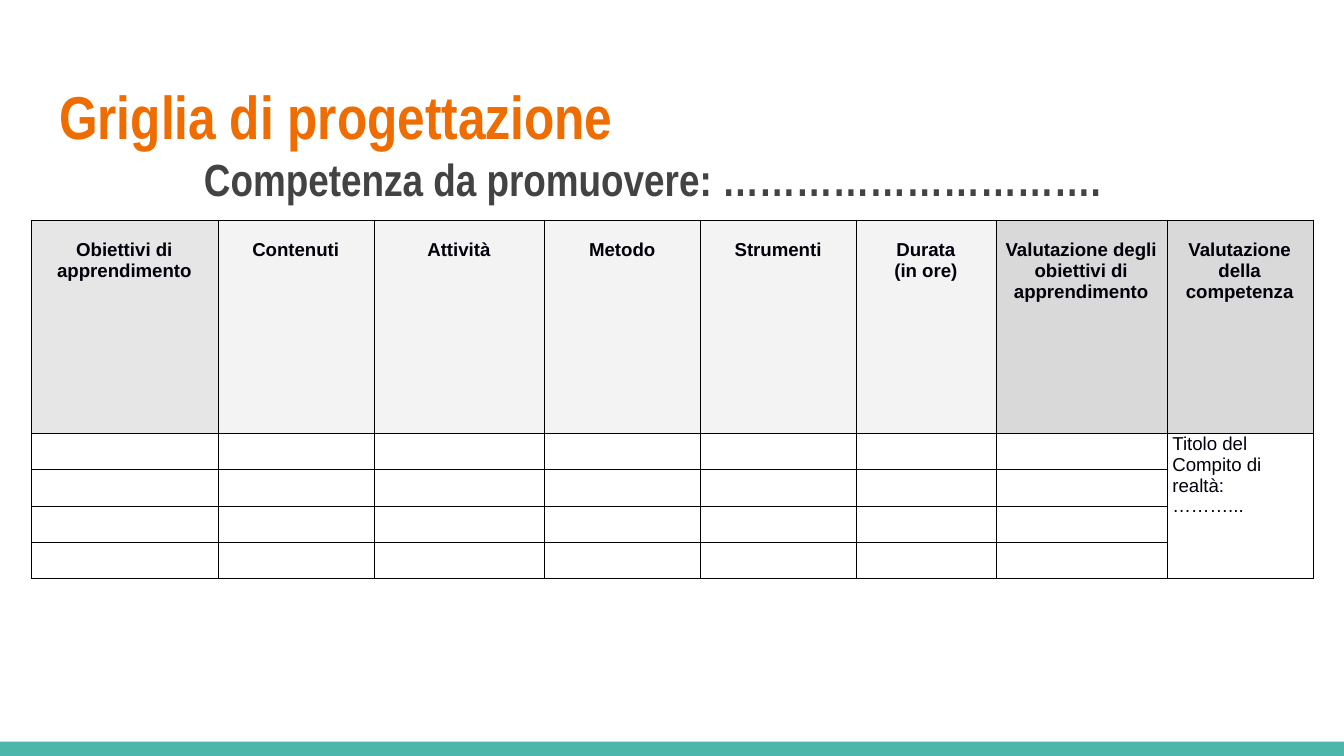
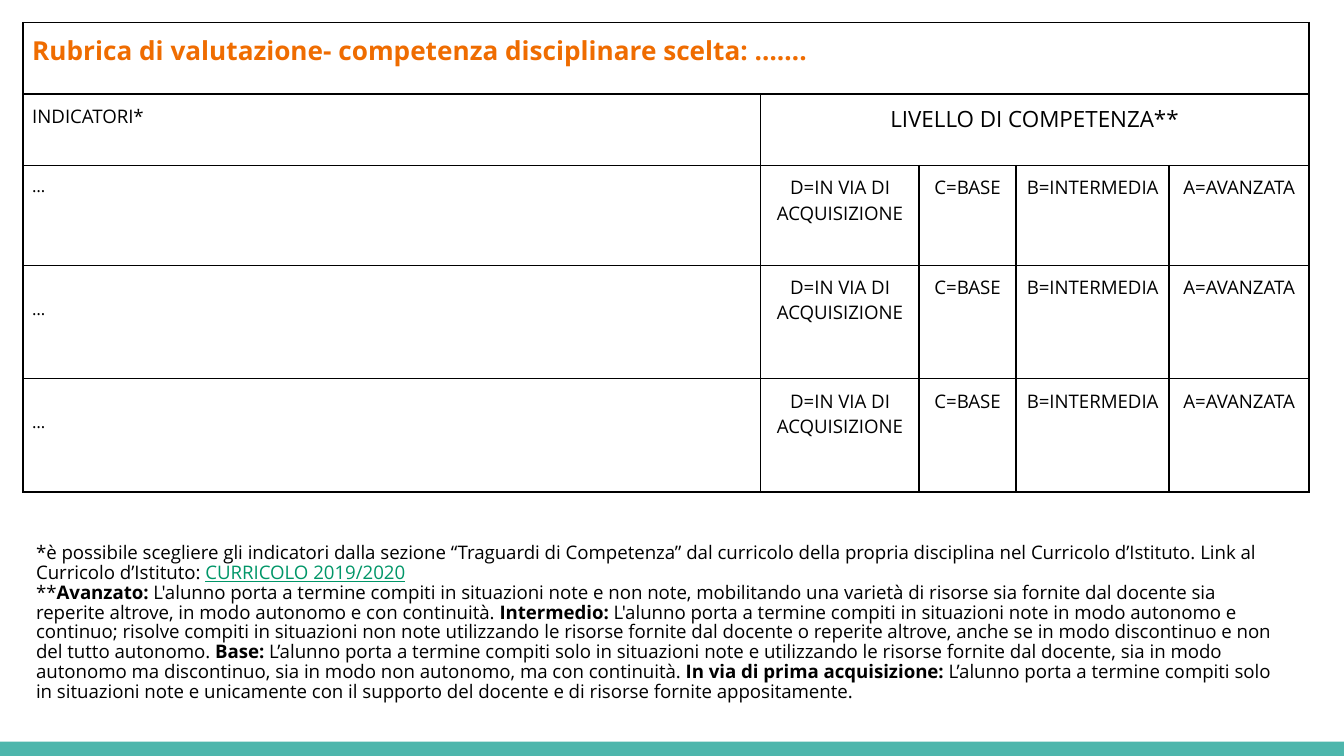
from dataclasses import dataclass

from lxml.etree import SubElement
from pptx import Presentation
from pptx.dml.color import RGBColor
from pptx.enum.shapes import MSO_SHAPE
from pptx.enum.text import MSO_ANCHOR, MSO_AUTO_SIZE, PP_ALIGN
from pptx.oxml.ns import qn
from pptx.util import Inches, Pt

W = Inches(10)
H = W * 9 // 16


@dataclass(frozen=True)
class Theme:
    orange: str = "EF6C00"
    teal: str = "4DB6AC"
    gray: str = "434343"
    ink: str = "00000A"
    black: str = "000000"
    link: str = "009668"
    white: str = "FFFFFF"
    fill_goals: str = "E6E6E6"
    fill_plan: str = "F3F3F3"
    fill_grades: str = "D9D9D9"
    title_font: str = "Arial Narrow"
    grid_font: str = "Arial"
    rubric_font: str = "Open Sans"
    title: float = 32.4
    subtitle: float = 24.1
    heading: float = 14
    label: float = 12
    body: float = 10
    small: float = 9


T = Theme()
GRID_TEXT = dict(name=T.grid_font, size=T.body, color=T.ink, bold=False)
RUBRIC_TEXT = dict(name=T.rubric_font, size=T.body, color=T.black, bold=False)

PLAN_COLS = [139, 116, 127, 116, 116, 104, 127, 109]
PLAN_ROWS = [28.25] + [4.8] * 4
PLAN_HEADS = [
    (T.fill_goals, ["Obiettivi di", "apprendimento"]),
    (T.fill_plan, ["Contenuti"]),
    (T.fill_plan, ["Attività"]),
    (T.fill_plan, ["Metodo"]),
    (T.fill_plan, ["Strumenti"]),
    (T.fill_plan, ["Durata", "(in ore)"]),
    (T.fill_grades, ["Valutazione degli", "obiettivi di apprendimento"]),
    (T.fill_grades, ["Valutazione", "della", "competenza"]),
]

RUBRIC_COLS = [549, 118, 72, 114, 104]
RUBRIC_ROWS = [9.45, 9.45, 13.2, 15, 15]
LEVELS = ["D=IN VIA DI ACQUISIZIONE", "C=BASE", "B=INTERMEDIA", "A=AVANZATA"]

LINK = dict(color=T.link, underline=True)
BOLD = dict(bold=True)
NOTES = [
    [("*è possibile scegliere gli indicatori dalla sezione “Traguardi di Competenza” "
      "dal curricolo della propria disciplina nel Curricolo d’Istituto. "
      "Link al Curricolo d’Istituto: ", {}),
     ("CURRICOLO 2019/2020", LINK)],
    [("**", {}),
     ("Avanzato:", BOLD),
     (" L'alunno porta a termine compiti in situazioni note e non note, mobilitando una "
      "varietà di risorse sia fornite dal docente sia reperite altrove, in modo autonomo "
      "e con continuità. ", {}),
     ("Intermedio:", BOLD),
     (" L'alunno porta a termine compiti in situazioni note in modo autonomo e continuo; "
      "risolve compiti in situazioni non note utilizzando le risorse fornite dal docente o "
      "reperite altrove, anche se in modo discontinuo e non del tutto autonomo. ", {}),
     ("Base: ", BOLD),
     ("L’alunno porta a termine compiti solo in situazioni note e utilizzando le risorse "
      "fornite dal docente, sia in modo autonomo ma discontinuo, sia in modo non autonomo, "
      "ma con continuità. ", {}),
     ("In via di prima acquisizione:", BOLD),
     (" L’alunno porta a termine compiti solo in situazioni note e unicamente con il "
      "supporto del docente e di risorse fornite appositamente.", {})],
]


def box(x, y, w, h):
    """Turn percentages of the slide into left, top, width, height."""
    return [round(side * pct / 100) for side, pct in zip((W, H, W, H), (x, y, w, h))]


def set_all(obj, values):
    for key, value in values.items():
        setattr(obj, key, value)


def add_run(p, text, fmt):
    r = p.add_run()
    r.text = text
    values = dict(fmt)
    r.font.color.rgb = RGBColor.from_string(values.pop("color"))
    values["size"] = Pt(values["size"])
    set_all(r.font, values)


def write(tf, paragraphs, base, **layout):
    """Fill a text frame; each paragraph is a list of (text, format changes)."""
    for i, runs in enumerate(paragraphs):
        p = tf.add_paragraph() if i else tf.paragraphs[0]
        set_all(p, layout)
        for text, changes in runs:
            add_run(p, text, {**base, **changes})


def set_margins(target, left, top, right, bottom):
    set_all(target, dict(margin_left=Inches(left), margin_top=Inches(top),
                         margin_right=Inches(right), margin_bottom=Inches(bottom)))


def write_cell(cell, lines, base, **layout):
    write(cell.text_frame, [[(line, {})] for line in lines], base, **layout)


def style_cell(cell, color, width, margins):
    set_margins(cell, *margins)
    tc_pr = cell._tc.get_or_add_tcPr()
    for side in ("a:lnL", "a:lnR", "a:lnT", "a:lnB"):
        ln = SubElement(tc_pr, qn(side), w=str(Pt(width)))
        fill = SubElement(ln, qn("a:solidFill"))
        SubElement(fill, qn("a:srgbClr"), val=color)
    paint(cell, T.white)
    p = cell.text_frame.paragraphs[0]
    SubElement(p._p, qn("a:endParaRPr"), sz=str(T.body * 100))


def paint(target, color):
    target.fill.solid()
    target.fill.fore_color.rgb = RGBColor.from_string(color)


def add_grid(s, x, y, w, cols, rows, border, margins):
    """Add a bordered table; cols are weights, rows are percentages of the slide."""
    left, top, width, height = box(x, y, w, sum(rows))
    table = s.shapes.add_table(len(rows), len(cols), left, top, width, height).table
    set_all(table, dict(first_row=False, horz_banding=False))
    for column, weight in zip(table.columns, cols):
        column.width = round(width * weight / sum(cols))
    for row, pct in zip(table.rows, rows):
        row.height = round(H * pct / 100)
    for cell in table.iter_cells():
        style_cell(cell, *border, margins)
    return table


def add_slide(prs, layout_name):
    """Add a slide with the teal band along its foot."""
    s = prs.slides.add_slide(prs.slide_layouts.get_by_name(layout_name))
    band = s.shapes.add_shape(MSO_SHAPE.RECTANGLE, *box(0, 98.1, 100, 1.9))
    band.shadow.inherit = False
    paint(band, T.teal)
    band.line.fill.background()
    return s


def place_title(s, x, y, w, h):
    title = s.shapes.title
    set_all(title, dict(zip(("left", "top", "width", "height"), box(x, y, w, h))))
    tf = title.text_frame
    set_all(tf, dict(word_wrap=True, auto_size=MSO_AUTO_SIZE.NONE,
                     vertical_anchor=MSO_ANCHOR.TOP))
    set_margins(tf, 0.1, 0.1, 0.1, 0.1)
    base = dict(name=T.title_font, size=T.title, color=T.orange, bold=True)
    subtitle = dict(size=T.subtitle, color=T.gray)
    write(tf, [[("Griglia di progettazione", {})],
               [("Competenza da promuovere: ………………………….", subtitle)]],
          base, alignment=PP_ALIGN.LEFT)
    tf.paragraphs[1].alignment = PP_ALIGN.CENTER


def place_plan(s, x, y, w):
    table = add_grid(s, x, y, w, PLAN_COLS, PLAN_ROWS, ("000001", 0.5), (0.04, 0, 0.05, 0))
    for col, (color, lines) in enumerate(PLAN_HEADS):
        cell = table.cell(0, col)
        cell.margin_top = Inches(0.15)
        paint(cell, color)
        write_cell(cell, lines, {**GRID_TEXT, **BOLD}, alignment=PP_ALIGN.CENTER)
    task = table.cell(1, 7)
    task.merge(table.cell(4, 7))
    write_cell(task, ["Titolo del Compito di realtà:", "………..."], GRID_TEXT)


def place_rubric(s, x, y, w):
    table = add_grid(s, x, y, w, RUBRIC_COLS, RUBRIC_ROWS, (T.black, 1), (0.07,) * 4)
    heading, label = table.cell(0, 0), table.cell(1, 1)
    heading.merge(table.cell(0, 4))
    label.merge(table.cell(1, 4))
    write_cell(heading, ["Rubrica di valutazione- competenza disciplinare scelta: ……."],
               {**RUBRIC_TEXT, "size": T.heading, "color": T.orange, "bold": True})
    write_cell(table.cell(1, 0), ["INDICATORI*"], RUBRIC_TEXT)
    write_cell(label, ["LIVELLO DI COMPETENZA**"], {**RUBRIC_TEXT, "size": T.label},
               alignment=PP_ALIGN.CENTER)
    for row, spacing in ((2, 1.0), (3, 2.0), (4, 2.0)):
        write_cell(table.cell(row, 0), ["…"], {**RUBRIC_TEXT, "size": T.small},
                   line_spacing=spacing)
        for col, level in enumerate(LEVELS, 1):
            write_cell(table.cell(row, col), [level], RUBRIC_TEXT,
                       alignment=PP_ALIGN.CENTER)


def place_notes(s, x, y, w, h):
    tf = s.shapes.add_textbox(*box(x, y, w, h)).text_frame
    tf.word_wrap = True
    set_margins(tf, 0.1, 0.1, 0.1, 0.1)
    write(tf, NOTES, RUBRIC_TEXT, line_spacing=0.88)


def plan_slide(prs):
    s = add_slide(prs, "Title Only")
    place_title(s, 3.4, 8.7, 90.4, 11.2)
    place_plan(s, 2.35, 29.1, 95.4)


def rubric_slide(prs):
    s = add_slide(prs, "Blank")
    place_rubric(s, 1.7, 3, 95.7)
    place_notes(s, 1.7, 70.2, 93.9, 35.4)


def main():
    prs = Presentation()
    set_all(prs, dict(slide_width=W, slide_height=H))
    plan_slide(prs)
    rubric_slide(prs)
    prs.save("out.pptx")


if __name__ == "__main__":
    main()
